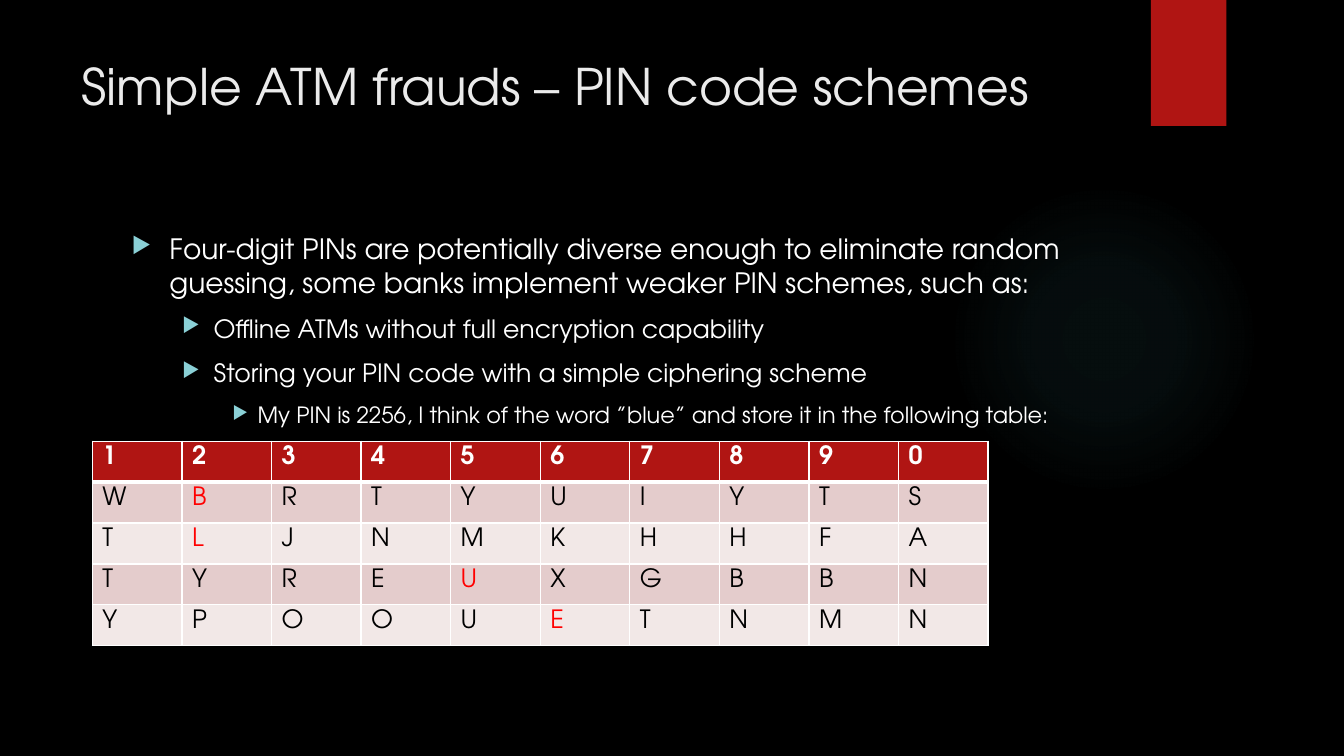
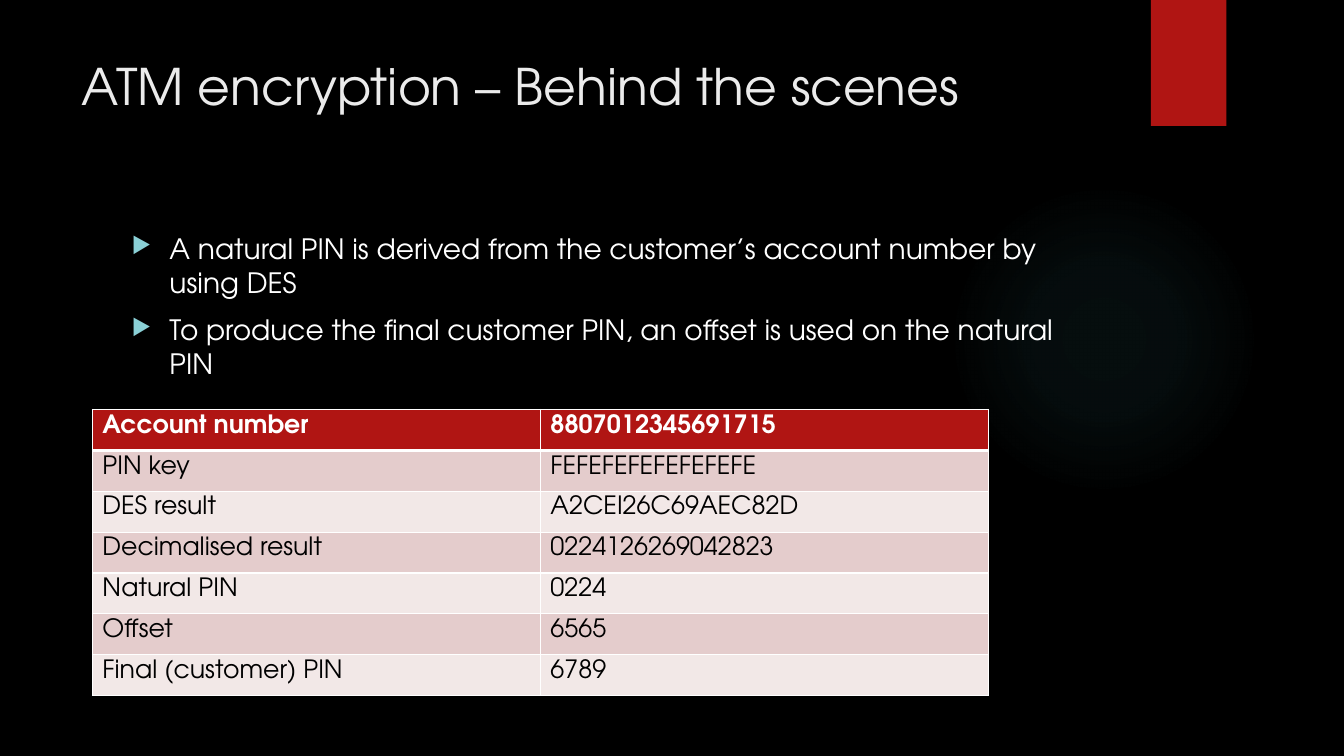
from lxml import etree
from pptx import Presentation
from pptx.dml.color import RGBColor
from pptx.enum.shapes import MSO_SHAPE as Shape
from pptx.enum.text import MSO_ANCHOR as Anchor, MSO_AUTO_SIZE as AutoSize, PP_ALIGN as Align
from pptx.oxml import parse_xml
from pptx.oxml.ns import nsdecls, qn
from pptx.util import Pt

COLORS = {
    "background": "000000", "title": "EBEBEB", "body": "FFFFFF", "bullet": "8AD0D6",
    "glow": "50B9C1", "accent": "B01513", "border": "FFFFFF", "header text": "FFFFFF",
    "cell text": "000000", "marked text": "FF0000", "odd row": "E4CCCC", "even row": "F2E8E7",
}
FONT = "TeX Gyre Adventor"

# Boxes are left, top, width, height in points
TITLE_BOX = (51, 36, 741, 110)
BODY_BOX = (87, 162, 704, 330)
GLOW_BOX = (677.5, 131.5, 222, 222)
RIBBON_BOX = (822, 0, 54, 90)
GLOW_STOPS = [(0, 7), (36, 6), (69, 0)]  # position %, opacity %
TABLE_LEFT, TABLE_WIDTH, ROW_HEIGHT = 66, 640, 29.2

# Text size, left margin and hanging indent of each outline level
LEVELS = [(20, 27, 27), (18, 58.5, 22.5), (16, 90, 18)]

PIN = "2256"
PIN_TABLE = ["1234567890", "WBRTYUIYTS", "TLJNMKHHFA", "TYREUXGBBN", "YPOOUETNMN"]
MARKED_CELLS = {(row, PIN_TABLE[0].index(digit)) for row, digit in enumerate(PIN, 1)}

SLIDES = [
    {
        "title": "Simple ATM frauds – PIN code schemes",
        "outline": [
            (0, "Four-digit PINs are potentially diverse enough to eliminate random "
                "guessing, some banks implement weaker PIN schemes, such as:"),
            (1, "Offline ATMs without full encryption capability"),
            (1, "Storing your PIN code with a simple ciphering scheme"),
            (2, "My PIN is 2256, I think of the word ”blue” and store it in the following table:"),
        ],
        "rows": PIN_TABLE,
        "table top": 315.2,
        "marked": MARKED_CELLS,
    },
    {
        "title": "ATM encryption – Behind the scenes",
        "outline": [
            (0, "A natural PIN is derived from the customer’s account number by using DES"),
            (0, "To produce the final customer PIN, an offset is used on the natural PIN"),
        ],
        "rows": [
            ("Account number", "8807012345691715"),
            ("PIN key", "FEFEFEFEFEFEFEFE"),
            ("DES result", "A2CEI26C69AEC82D"),
            ("Decimalised result", "0224126269042823"),
            ("Natural PIN", "0224"),
            ("Offset", "6565"),
            ("Final (customer) PIN", "6789"),
        ],
        "table top": 292.5,
        "marked": set(),
    },
]


def rgb(name):
    return RGBColor.from_string(COLORS[name])


def points(box):
    return [Pt(length) for length in box]


def set_values(target, values):
    for name, value in values.items():
        setattr(target, name, value)


def write(para, text, size, color, bold=False):
    span = para.add_run()
    span.text = text
    set_values(span.font, {"name": FONT, "size": Pt(size), "bold": bold})
    span.font.color.rgb = rgb(color)


def add_child(parent, tag, **attributes):
    return etree.SubElement(parent, qn(tag), attributes)


# Shared decoration
def add_plain_shape(page, kind, box):
    shape = page.shapes.add_shape(kind, *points(box))
    shape.shadow.inherit = False
    shape.line.fill.background()
    shape.fill.solid()
    shape.fill.fore_color.rgb = rgb("accent")
    return shape


def add_glow(page, box):
    glow = add_plain_shape(page, Shape.OVAL, box)
    stops = "".join(
        f'<a:gs pos="{place * 1000}"><a:srgbClr val="{COLORS["glow"]}">'
        f'<a:alpha val="{opacity * 1000}"/></a:srgbClr></a:gs>'
        for place, opacity in GLOW_STOPS)
    gradient = parse_xml(
        f'<a:gradFill {nsdecls("a")} rotWithShape="1"><a:gsLst>{stops}</a:gsLst>'
        '<a:path path="circle"><a:fillToRect l="50000" t="50000" r="50000" b="50000"/>'
        '</a:path></a:gradFill>')
    properties = glow.element.spPr
    properties.replace(properties.find(qn("a:solidFill")), gradient)
    return glow


def decorate_layout(layout, page):
    """Set the background and move the decoration behind every slide."""
    fill = layout.slide_master.background.fill
    fill.solid()
    fill.fore_color.rgb = rgb("background")
    parts = [add_glow(page, GLOW_BOX), add_plain_shape(page, Shape.RECTANGLE, RIBBON_BOX)]
    for position, part in enumerate(parts, 2):
        layout.shapes.element.insert(position, part.element)


# Slide regions
def fill_title(page, text, box):
    title = page.shapes.title
    set_values(title, dict(zip(("left", "top", "width", "height"), points(box))))
    set_values(title.text_frame, {
        "word_wrap": True, "auto_size": AutoSize.NONE, "vertical_anchor": Anchor.TOP})
    para = title.text_frame.paragraphs[0]
    para.alignment = Align.LEFT
    write(para, text, 36, "title")


def add_bullet(para, margin, hanging):
    properties = para._p.get_or_add_pPr()
    properties.set("marL", str(Pt(margin)))
    properties.set("indent", str(-Pt(hanging)))
    add_child(add_child(properties, "a:buClr"), "a:srgbClr", val=COLORS["bullet"])
    add_child(properties, "a:buSzPct", val="80000")
    add_child(properties, "a:buChar", char="▶")


def add_outline(page, entries, box):
    frame = page.shapes.add_textbox(*points(box)).text_frame
    frame.word_wrap = True
    for index, (level, text) in enumerate(entries):
        para = frame.add_paragraph() if index else frame.paragraphs[0]
        size, margin, hanging = LEVELS[level]
        add_bullet(para, margin, hanging)
        para.level = level
        para.space_before = Pt(10 if index else 0)
        write(para, text, size, "body")


def add_borders(cell, widths):
    properties = cell._tc.get_or_add_tcPr()
    for side, width in widths.items():
        line = add_child(properties, f"a:ln{side}", w=str(Pt(width)))
        add_child(add_child(line, "a:solidFill"), "a:srgbClr", val=COLORS["border"])


def add_grid(page, rows, top, marked):
    columns = len(rows[0])
    box = (TABLE_LEFT, top, TABLE_WIDTH, ROW_HEIGHT * len(rows))
    table = page.shapes.add_table(len(rows), columns, *points(box)).table
    table.horz_banding = False
    for column in table.columns:
        column.width = Pt(TABLE_WIDTH / columns)
    for row, texts in enumerate(rows):
        table.rows[row].height = Pt(ROW_HEIGHT)
        header = row == 0
        fill = "accent" if header else "odd row" if row % 2 else "even row"
        for column, text in enumerate(texts):
            cell = table.cell(row, column)
            set_values(cell, {"margin_top": Pt(3.6), "margin_bottom": Pt(3.6),
                              "vertical_anchor": Anchor.TOP})
            # The thick rule lies under the header row
            add_borders(cell, {"L": 1, "R": 1, "T": 3 if row == 1 else 1,
                               "B": 3 if header else 1})
            cell.fill.solid()
            cell.fill.fore_color.rgb = rgb(fill)
            color = ("header text" if header
                     else "marked text" if (row, column) in marked else "cell text")
            write(cell.text_frame.paragraphs[0], text, 18, color, bold=header)


def build_table_slide(page, content):
    fill_title(page, content["title"], TITLE_BOX)
    add_outline(page, content["outline"], BODY_BOX)
    add_grid(page, content["rows"], content["table top"], content["marked"])


def main():
    deck = Presentation()
    set_values(deck, {"slide_width": Pt(960), "slide_height": Pt(540)})
    layout = deck.slide_layouts.get_by_name("Title Only")
    pages = [deck.slides.add_slide(layout) for _ in SLIDES]
    decorate_layout(layout, pages[0])
    for page, content in zip(pages, SLIDES):
        build_table_slide(page, content)
    deck.save("out.pptx")


if __name__ == "__main__":
    main()
